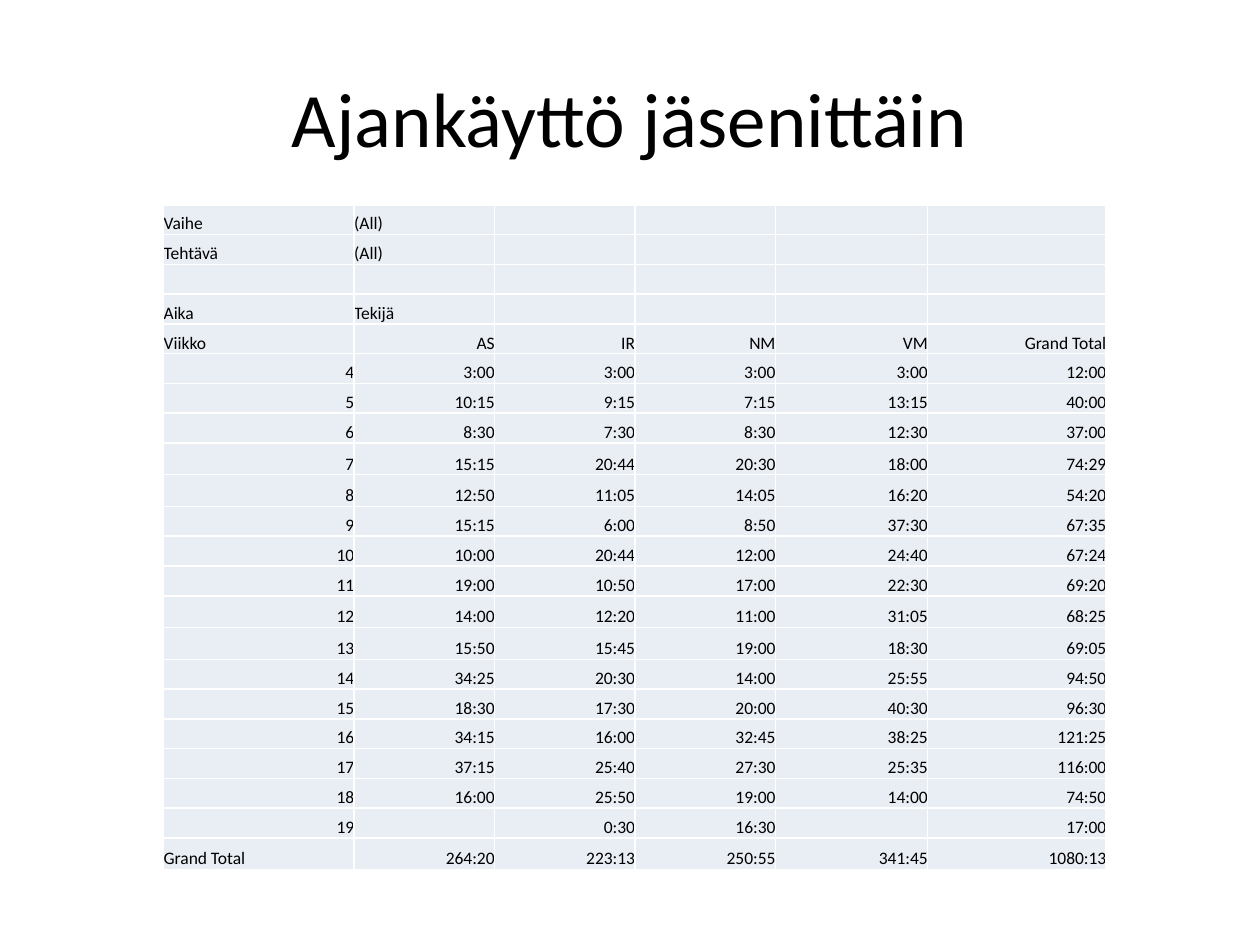
from lxml.etree import SubElement
from pptx import Presentation
from pptx.dml.color import RGBColor as RGB
from pptx.enum.text import MSO_ANCHOR as Anchor, PP_ALIGN as Align
from pptx.oxml.ns import qn
from pptx.util import Cm, Pt

# Content
TITLE = "Ajankäyttö jäsenittäin"
FILTERS = [
    ("Vaihe", "(All)"),
    ("Tehtävä", "(All)"),
    (),
    ("Aika", "Tekijä"),
]
HOURS = [
    ("Viikko", "AS", "IR", "NM", "VM", "Grand Total"),
    ("4", "3:00", "3:00", "3:00", "3:00", "12:00"),
    ("5", "10:15", "9:15", "7:15", "13:15", "40:00"),
    ("6", "8:30", "7:30", "8:30", "12:30", "37:00"),
    ("7", "15:15", "20:44", "20:30", "18:00", "74:29"),
    ("8", "12:50", "11:05", "14:05", "16:20", "54:20"),
    ("9", "15:15", "6:00", "8:50", "37:30", "67:35"),
    ("10", "10:00", "20:44", "12:00", "24:40", "67:24"),
    ("11", "19:00", "10:50", "17:00", "22:30", "69:20"),
    ("12", "14:00", "12:20", "11:00", "31:05", "68:25"),
    ("13", "15:50", "15:45", "19:00", "18:30", "69:05"),
    ("14", "34:25", "20:30", "14:00", "25:55", "94:50"),
    ("15", "18:30", "17:30", "20:00", "40:30", "96:30"),
    ("16", "34:15", "16:00", "32:45", "38:25", "121:25"),
    ("17", "37:15", "25:40", "27:30", "25:35", "116:00"),
    ("18", "16:00", "25:50", "19:00", "14:00", "74:50"),
    ("19", "", "0:30", "16:30", "", "17:00"),
    ("Grand Total", "264:20", "223:13", "250:55", "341:45", "1080:13"),
]
ROWS = FILTERS + HOURS

# Style, lengths in cm
COLORS = {"text": "000000", "cell": "E9EDF4", "rule": "FFFFFF"}
FONT = "Calibri"
SIZE = 10
WIDTHS = [3.84, 2.83, 2.83, 2.83, 3.07, 3.6]
LOW, HIGH = 0.6, 0.64
TALL = {"7", "8", "12", "13", "Grand Total"}


def style(par, size, align):
    par.alignment = align
    for run in par.runs:
        run.font.name = FONT
        run.font.size = Pt(size)
        run.font.color.rgb = RGB.from_string(COLORS["text"])


def rule(cell):
    props = cell._tc.get_or_add_tcPr()
    for side in ("lnL", "lnR", "lnT", "lnB"):
        line = SubElement(props, qn(f"a:{side}"), w=str(Pt(1)))
        fill = SubElement(line, qn("a:solidFill"))
        SubElement(fill, qn("a:srgbClr"), val=COLORS["rule"])


def fill_cell(cell, text, align):
    cell.margin_left = cell.margin_right = 0
    cell.margin_top = cell.margin_bottom = 0
    cell.vertical_anchor = Anchor.BOTTOM
    rule(cell)
    cell.fill.solid()
    cell.fill.fore_color.rgb = RGB.from_string(COLORS["cell"])
    par = cell.text_frame.paragraphs[0]
    if text:
        par.text = text
        style(par, SIZE, align)
    else:
        # Keeps an empty cell from stretching its row
        SubElement(par._p, qn("a:endParaRPr"), sz=str(SIZE * 100))


def main():
    prs = Presentation()
    prs.slide_width, prs.slide_height = Cm(25.4), Cm(19.05)
    slide = prs.slides.add_slide(prs.slide_layouts[6])

    # Title
    box = slide.shapes.add_textbox(Cm(1.27), Cm(0.76), Cm(22.86), Cm(3.18))
    frame = box.text_frame
    frame.word_wrap = True
    frame.vertical_anchor = Anchor.MIDDLE
    frame.text = TITLE
    style(frame.paragraphs[0], 44, Align.CENTER)

    # Table of hours
    heights = [HIGH if row and row[0] in TALL else LOW for row in ROWS]
    shape = slide.shapes.add_table(
        len(ROWS), len(WIDTHS), Cm(3.3), Cm(4.13),
        Cm(sum(WIDTHS)), Cm(sum(heights)))
    table = shape.table
    table.first_row = table.horz_banding = False
    for col, width in zip(table.columns, WIDTHS):
        col.width = Cm(width)
    for r, (row, height) in enumerate(zip(ROWS, heights)):
        table.rows[r].height = Cm(height)
        for c in range(len(WIDTHS)):
            text = row[c] if c < len(row) else ""
            label = r < len(FILTERS) or (c == 0 and not text.isdigit())
            fill_cell(table.cell(r, c), text,
                      Align.LEFT if label else Align.RIGHT)

    prs.save("out.pptx")


if __name__ == "__main__":
    main()
